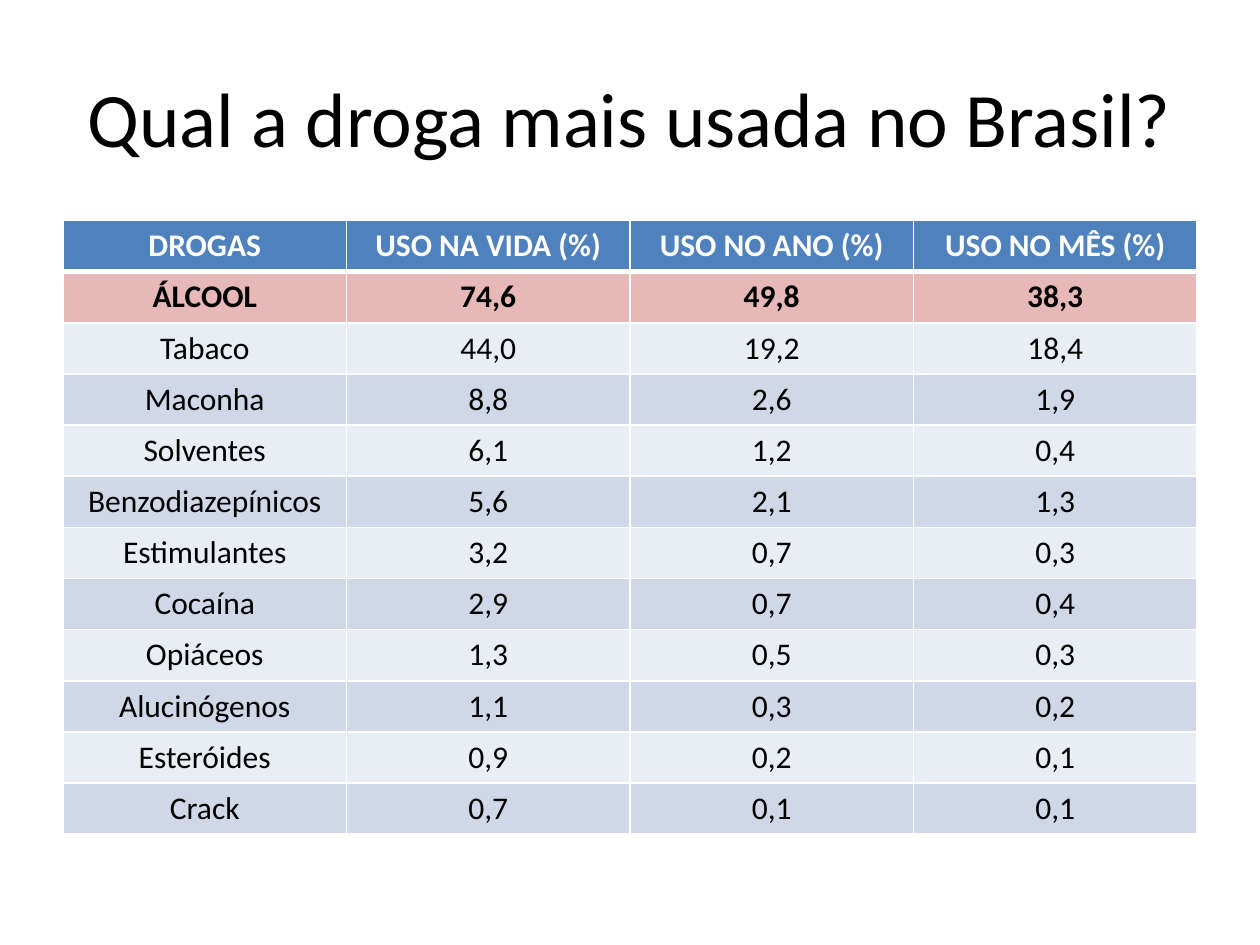
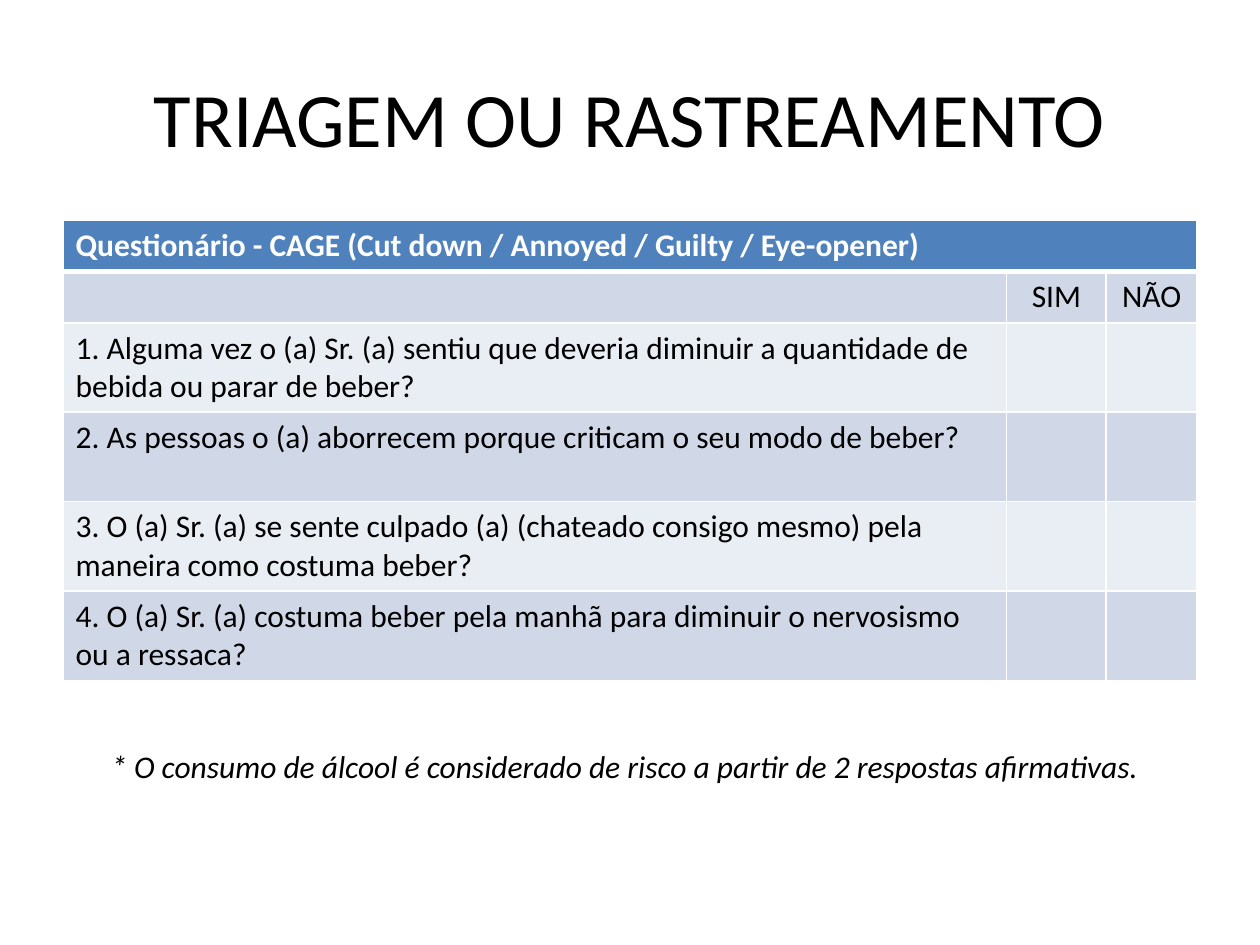
import pptx
import pptx.util
import pptx.dml.color
import pptx.enum.text
import pptx.oxml
import pptx.oxml.ns

Inches, Pt = pptx.util.Inches, pptx.util.Pt
RGBColor = pptx.dml.color.RGBColor
ALIGN = pptx.enum.text.PP_ALIGN
ANCHOR = pptx.enum.text.MSO_ANCHOR

WHITE = RGBColor(0xFF, 0xFF, 0xFF)
BLACK = RGBColor(0x00, 0x00, 0x00)
HEADER_BLUE = RGBColor(0x4F, 0x81, 0xBD)
BANDS = (RGBColor(0xD0, 0xD8, 0xE8), RGBColor(0xE9, 0xED, 0xF4))
HIGHLIGHT = RGBColor(0xE6, 0xB9, 0xB8)

TITLE = {"size": Pt(44)}
HEADER = {"bold": True, "color": WHITE}
STRONG = {"bold": True}
ROW_H = 0.406
QUESTION_H = 0.71

DRUG_USE = [
    ("DROGAS", "USO NA VIDA (%)", "USO NO ANO (%)", "USO NO MÊS (%)"),
    ("ÁLCOOL", "74,6", "49,8", "38,3"),
    ("Tabaco", "44,0", "19,2", "18,4"),
    ("Maconha", "8,8", "2,6", "1,9"),
    ("Solventes", "6,1", "1,2", "0,4"),
    ("Benzodiazepínicos", "5,6", "2,1", "1,3"),
    ("Estimulantes", "3,2", "0,7", "0,3"),
    ("Cocaína", "2,9", "0,7", "0,4"),
    ("Opiáceos", "1,3", "0,5", "0,3"),
    ("Alucinógenos", "1,1", "0,3", "0,2"),
    ("Esteróides", "0,9", "0,2", "0,1"),
    ("Crack", "0,7", "0,1", "0,1"),
]
QUESTIONS = [
    "1. Alguma vez o (a) Sr. (a) sentiu que deveria diminuir a quantidade de bebida ou parar de beber?",
    "2. As pessoas o (a) aborrecem porque criticam o seu modo de beber?",
    "3. O (a) Sr. (a) se sente culpado (a) (chateado consigo mesmo) pela maneira como costuma beber?",
    "4. O (a) Sr. (a) costuma beber pela manhã para diminuir o nervosismo ou a ressaca?",
]
CAGE = [
    ("Questionário - CAGE (Cut down / Annoyed / Guilty / Eye-opener)", "", ""),
    ("", "SIM", "NÃO"),
    *[(question, "", "") for question in QUESTIONS],
]


def write(tf, text, align, formats):
    p = tf.paragraphs[0]
    p.alignment = align
    r = p.add_run()
    r.text = text
    values = {"name": "Calibri", "size": Pt(18), "bold": False, "color": BLACK, **formats}
    r.font.color.rgb = values.pop("color")
    for name, value in values.items():
        setattr(r.font, name, value)


def add_text(s, text, left, top, width, height, formats):
    tf = s.shapes.add_textbox(*map(Inches, (left, top, width, height))).text_frame
    tf.word_wrap = True
    tf.vertical_anchor = ANCHOR.MIDDLE
    write(tf, text, ALIGN.CENTER, formats)


def add_titled_slide(prs, title):
    s = prs.slides.add_slide(prs.slide_layouts[6])
    add_text(s, title, 0.5, 0.3, 9, 1.25, TITLE)
    return s


def set_borders(cell, top, bottom):
    """Draw white cell edges; top and bottom are widths in points."""
    edges = {"lnL": 1, "lnR": 1, "lnT": top, "lnB": bottom}
    for i, (tag, width) in enumerate(edges.items()):
        ln = pptx.oxml.parse_xml(
            f'<a:{tag} {pptx.oxml.ns.nsdecls("a")} w="{Pt(width)}"><a:solidFill>'
            f'<a:srgbClr val="{WHITE}"/></a:solidFill></a:{tag}>')
        cell._tc.get_or_add_tcPr().insert(i, ln)


def add_grid(s, rows, widths, heights, aligns, highlight=None):
    """Add a table with a blue header row, banded body and an optional highlighted row."""
    frame = s.shapes.add_table(len(rows), len(widths), Inches(0.5), Inches(1.75),
                               Inches(sum(widths)), Inches(sum(heights)))
    table = frame.table
    for column, width in zip(table.columns, widths):
        column.width = Inches(width)
    for i, (row, height) in enumerate(zip(rows, heights)):
        table.rows[i].height = Inches(height)
        fill, formats = BANDS[(i - 1) % 2], {}
        if i == 0:
            fill, formats = HEADER_BLUE, HEADER
        elif i == highlight:
            fill, formats = HIGHLIGHT, STRONG
        for j, (text, align) in enumerate(zip(row, aligns)):
            cell = table.cell(i, j)
            cell.fill.solid()
            cell.fill.fore_color.rgb = fill
            set_borders(cell, 3 if i == 1 else 1, 3 if i == 0 else 1)
            if text:
                write(cell.text_frame, text, align, formats)
    return table


def add_drug_use_slide(prs):
    s = add_titled_slide(prs, "Qual a droga mais usada no Brasil?")
    add_grid(s, DRUG_USE, [2.25] * 4, [ROW_H] * len(DRUG_USE), [ALIGN.CENTER] * 4, highlight=1)


def add_screening_slide(prs):
    s = add_titled_slide(prs, "TRIAGEM OU RASTREAMENTO")
    table = add_grid(s, CAGE, [7.49, 0.79, 0.72],
                     [ROW_H] * 2 + [QUESTION_H] * len(QUESTIONS),
                     [ALIGN.LEFT, ALIGN.CENTER, ALIGN.CENTER])
    table.cell(0, 0).merge(table.cell(0, 2))
    add_text(s, "* O consumo de álcool é considerado de risco a partir de 2 respostas afirmativas.",
             0.43, 5.88, 9.06, 0.4, {"italic": True})


def main():
    prs = pptx.Presentation()
    prs.slide_width, prs.slide_height = Inches(10), Inches(7.5)
    add_drug_use_slide(prs)
    add_screening_slide(prs)
    prs.save("out.pptx")


if __name__ == "__main__":
    main()
